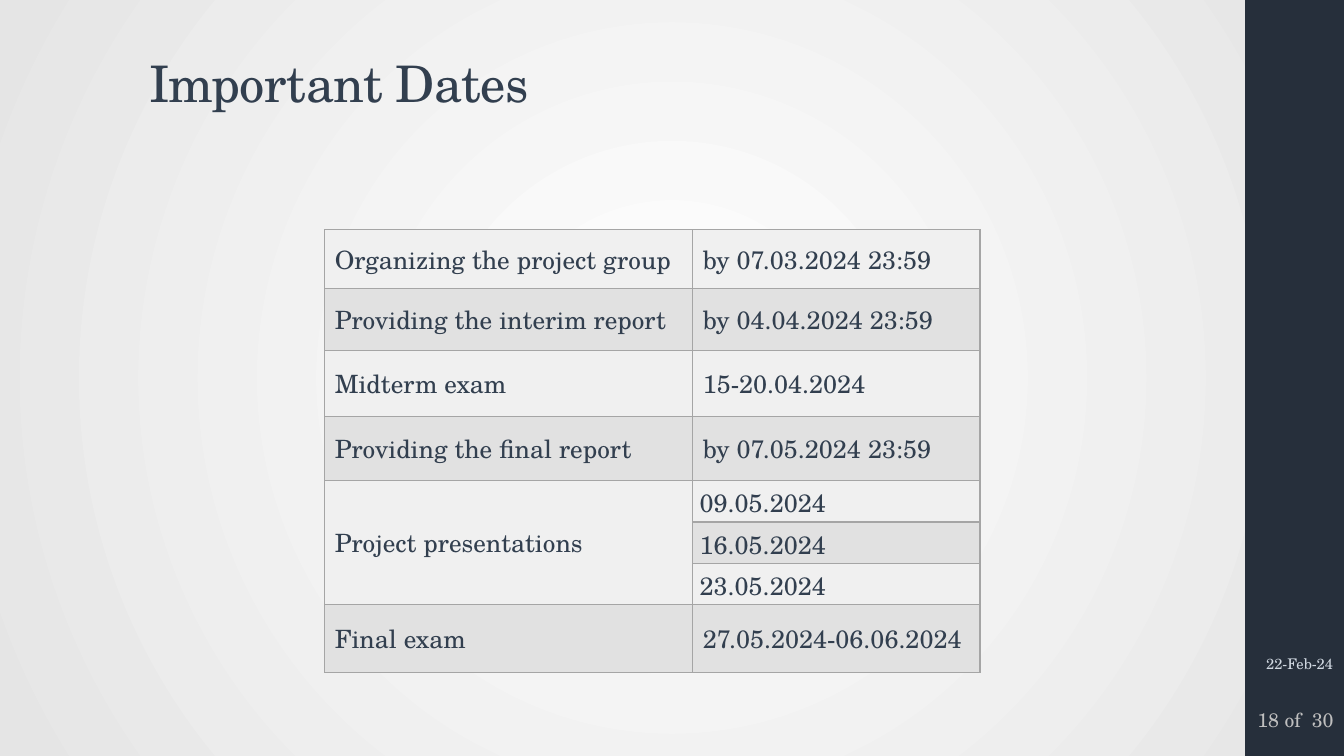
"""Build the Important Dates slide."""
from dataclasses import dataclass

from lxml import etree
from pptx import Presentation
from pptx import util as u
from pptx.dml.color import RGBColor
from pptx.enum import shapes, text
from pptx.oxml import ns

PX = 9144
LEFT, CENTER, RIGHT = text.PP_ALIGN.LEFT, text.PP_ALIGN.CENTER, text.PP_ALIGN.RIGHT


@dataclass(frozen=True)
class Theme:
    """Colours, font and type sizes of the slide."""
    font: str = "TeX Gyre Schola"
    ink: str = "323F4F"
    sidebar: str = "262F3B"
    number: str = "BFBFBF"
    date: str = "D0D8E1"
    border: str = "A5A5A5"
    bands: tuple = ("F0F0F0", "E1E1E1")
    backdrop: tuple = ("FFFFFF", "E5E5E5")
    title_size: float = 36
    table_size: float = 18
    number_size: float = 14
    date_size: float = 10.5


THEME = Theme()
COLUMNS = (365, 285)
ROW_HEIGHTS = (58, 62, 65, 64, 41, 41, 41, 67)
DATES = (
    ("Organizing the project group", ("by 07.03.2024 23:59",)),
    ("Providing the interim report", ("by 04.04.2024 23:59",)),
    ("Midterm exam", ("15-20.04.2024",)),
    ("Providing the final report", ("by 07.05.2024 23:59",)),
    ("Project presentations", ("09.05.2024", "16.05.2024", "23.05.2024")),
    ("Final exam", ("27.05.2024-06.06.2024",)),
)


def px(*lengths):
    """Turn px lengths into EMU."""
    return [u.Emu(length * PX) for length in lengths]


def apply(target, values):
    """Set each named attribute on the target."""
    for name, value in values.items():
        setattr(target, name, value)


def paint(fill, color):
    """Give a solid fill."""
    fill.solid()
    fill.fore_color.rgb = RGBColor.from_string(color)


def write(frame, wording, size, color, align=LEFT, spacing=1.0):
    """Write one formatted paragraph into a text frame."""
    frame.word_wrap = True
    paragraph = frame.paragraphs[0]
    apply(paragraph, {"alignment": align, "line_spacing": spacing})
    run = paragraph.add_run()
    run.text = wording
    apply(run.font, {"name": THEME.font, "size": u.Pt(size), "bold": False})
    run.font.color.rgb = RGBColor.from_string(color)
    return run


def add_backdrop(slide):
    """Fill the background with a circular gradient."""
    fill = slide.background.fill
    fill.gradient()
    for stop, color in zip(fill.gradient_stops, THEME.backdrop):
        stop.color.rgb = RGBColor.from_string(color)
    gradient = slide.element.find(".//" + ns.qn("a:gradFill"))
    gradient.remove(gradient.find(ns.qn("a:lin")))
    circle = etree.SubElement(gradient, ns.qn("a:path"), path="circle")
    etree.SubElement(circle, ns.qn("a:fillToRect"), {side: "100000" for side in "ltrb"})


def add_sidebar(slide):
    """Draw the dark band on the right."""
    band = slide.shapes.add_shape(shapes.MSO_SHAPE.RECTANGLE, *px(1235, 0, 100, 750))
    band.shadow.inherit = False
    paint(band.fill, THEME.sidebar)
    band.line.fill.background()


def add_title(slide, wording):
    """Place and format the title placeholder."""
    title = slide.shapes.title
    apply(title, dict(zip(("left", "top", "width", "height"), px(138, 40, 1060, 91))))
    apply(title.text_frame, {"vertical_anchor": text.MSO_ANCHOR.MIDDLE,
                             "auto_size": text.MSO_AUTO_SIZE.NONE})
    run = write(title.text_frame, wording, THEME.title_size, THEME.ink, spacing=0.9)
    run.font._element.set("spc", "-50")


def add_label(slide, box, wording, size, color, align, inset):
    """Add a vertically centred text box."""
    frame = slide.shapes.add_textbox(*px(*box)).text_frame
    margins = px(inset, 5, inset, 5)
    apply(frame, dict(zip(("margin_left", "margin_top", "margin_right", "margin_bottom"), margins)))
    frame.vertical_anchor = text.MSO_ANCHOR.MIDDLE
    write(frame, wording, size, color, align)


def style_cell(cell, band):
    """Fill a cell and draw its four borders."""
    cell.vertical_anchor = text.MSO_ANCHOR.MIDDLE
    properties = cell._tc.get_or_add_tcPr()
    for side in ("L", "R", "T", "B"):
        line = etree.SubElement(properties, ns.qn("a:ln" + side), w=str(u.Pt(1)))
        solid = etree.SubElement(line, ns.qn("a:solidFill"))
        etree.SubElement(solid, ns.qn("a:srgbClr"), val=THEME.border)
    paint(cell.fill, band)


def add_dates_table(slide):
    """Add the banded table, merging labels that have several dates."""
    box = px(322, 228, sum(COLUMNS), sum(ROW_HEIGHTS))
    table = slide.shapes.add_table(len(ROW_HEIGHTS), len(COLUMNS), *box).table
    apply(table, {"first_row": False, "horz_banding": False})
    for column, width in zip(table.columns, px(*COLUMNS)):
        column.width = width
    for index, (row, height) in enumerate(zip(table.rows, px(*ROW_HEIGHTS))):
        row.height = height
        for cell in row.cells:
            style_cell(cell, THEME.bands[index % 2])
    top = 0
    for event, days in DATES:
        label = table.cell(top, 0)
        several = len(days) > 1
        if several:
            label.merge(table.cell(top + len(days) - 1, 0))
        write(label.text_frame, event, THEME.table_size, THEME.ink)
        for offset, day in enumerate(days):
            cell = table.cell(top + offset, 1)
            if several:
                side, edge = px(7, 0)
                apply(cell, {"margin_left": side, "margin_right": side,
                             "margin_top": edge, "margin_bottom": edge})
            write(cell.text_frame, day, THEME.table_size, THEME.ink,
                  spacing=1.07 if several else 1.0)
        top += len(days)


def main():
    """Build and save the slide."""
    presentation = Presentation()
    apply(presentation, dict(zip(("slide_width", "slide_height"), px(1333, 750))))
    slide = presentation.slides.add_slide(presentation.slide_layouts[5])
    add_backdrop(slide)
    add_sidebar(slide)
    add_label(slide, (1235, 681, 100, 65), "18 of  30",
              THEME.number_size, THEME.number, CENTER, 5)
    add_title(slide, "Important Dates")
    add_dates_table(slide)
    add_label(slide, (1235, 638, 97, 40), "22-Feb-24",
              THEME.date_size, THEME.date, RIGHT, 10)
    presentation.save("out.pptx")


if __name__ == "__main__":
    main()
